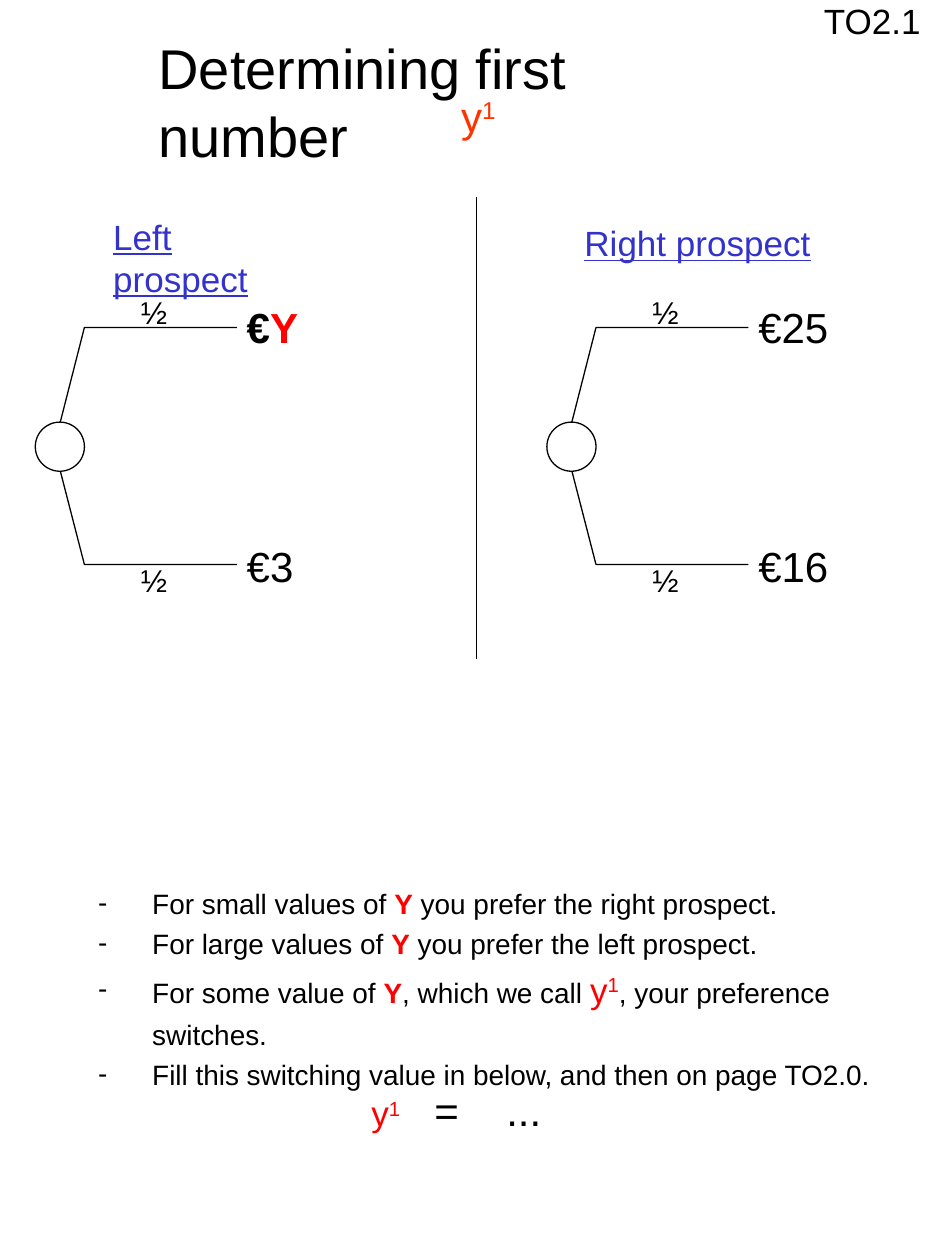
import pptx
import pptx.util
import pptx.dml.color
import pptx.enum.shapes
import pptx.oxml
import pptx.oxml.ns
from lxml import etree

Inches = pptx.util.Inches
Pt = pptx.util.Pt
RGB = pptx.dml.color.RGBColor
BLACK = RGB(0, 0, 0)
WHITE = RGB(255, 255, 255)
RED = RGB(255, 0, 0)
ORANGE = RGB(255, 0x33, 0)
BLUE = RGB(0x33, 0x33, 0xCC)
FONT = "Arial"


def add_run(para, text, size, color=BLACK, bold=False, line=False, lift=False):
    run = para.add_run()
    run.text = text
    font = run.font
    font.name, font.size, font.bold = FONT, Pt(size), bold
    font.underline = line
    font.color.rgb = color
    if lift:
        run._r.get_or_add_rPr().set("baseline", "30000")


def add_text(slide, box, runs, wrap=False, left=0.1, right=0.1):
    frame = slide.shapes.add_textbox(*map(Inches, box)).text_frame
    frame.word_wrap = wrap
    frame.margin_left, frame.margin_right = Inches(left), Inches(right)
    for run in runs:
        add_run(frame.paragraphs[0], **run)
    return frame


def add_tag(slide, box, text, right):
    add_text(slide, box, [dict(text=text, size=20, color=BLUE, line=True)],
             wrap=True, right=right)


def symbol(size, color):
    return [dict(text="y", size=size, color=color),
            dict(text="1", size=size, color=color, lift=True)]


def ink(shape):
    shape.shadow.inherit = False
    shape.line.color.rgb = BLACK
    shape.line.width = Pt(0.75)


def add_header(slide, left, top):
    add_text(slide, (left, top, 5.06, 0.63),
             [dict(text="Determining first number", size=32)],
             wrap=True, right=0.6)
    add_text(slide, (left + 1.85, top + 0.45, 1.04, 0.5),
             symbol(24, ORANGE), wrap=True, left=0.65, right=0)
    add_text(slide, (6.44, -0.05, 0.97, 0.43), [dict(text="TO2.1", size=20)])


def add_tree(slide, left, top, high, low):
    for start, end in ((0.94, 0), (0.95, 1.88)):
        pen = slide.shapes.build_freeform(Inches(left + 0.15), Inches(top + start))
        pen.add_line_segments([(Inches(left + 0.39), Inches(top + end)),
                               (Inches(left + 1.6), Inches(top + end))], close=False)
        branch = pen.convert_to_shape()
        branch.fill.background()
        ink(branch)
    node = slide.shapes.add_shape(
        pptx.enum.shapes.MSO_SHAPE.OVAL,
        Inches(left), Inches(top + 0.75), Inches(0.39), Inches(0.39))
    node.fill.solid()
    node.fill.fore_color.rgb = WHITE
    ink(node)
    for gap in (-0.32, 1.8):
        add_text(slide, (left + 0.74, top + gap, 0.41, 0.4),
                 [dict(text="½", size=18)])
    for gap, (runs, width) in ((-0.26, high), (1.64, low)):
        add_text(slide, (left + 1.58, top + gap, width, 0.5), runs)


def add_rule(slide, x, top, base):
    rule = slide.shapes.add_connector(
        pptx.enum.shapes.MSO_CONNECTOR.STRAIGHT,
        Inches(x), Inches(top), Inches(x), Inches(base))
    rule.line.color.rgb = BLACK
    rule.line.width = Pt(0.75)
    etree.SubElement(rule._element.spPr, pptx.oxml.ns.qn("a:effectLst"))


def add_notes(slide, box):
    key = dict(text="Y", size=16, color=RED, bold=True)

    def plain(text):
        return dict(text=text, size=16)

    rows = [
        [plain("For small values of "), key, plain(" you prefer the right prospect.")],
        [plain("For large values of "), key, plain(" you prefer the left prospect.")],
        [plain("For some value of "), key, plain(", which we call "),
         *symbol(20, RED), plain(", your preference switches.")],
        [plain("Fill this switching value in below, and then on page TO2.0.")],
    ]
    frame = add_text(slide, box, [], wrap=True)
    for i, row in enumerate(rows):
        para = frame.add_paragraph() if i else frame.paragraphs[0]
        para.line_spacing = 1.2
        props = para._p.get_or_add_pPr()
        props.set("marL", str(Inches(0.43)))
        props.set("indent", str(-Inches(0.43)))
        face = etree.SubElement(props, pptx.oxml.ns.qn("a:buFont"))
        face.set("typeface", FONT)
        mark = etree.SubElement(props, pptx.oxml.ns.qn("a:buChar"))
        mark.set("char", "-")
        for run in row:
            add_run(para, **run)


def add_answer(slide, box):
    runs = symbol(20, RED) + [dict(text="\t=\t...", size=24)]
    frame = add_text(slide, box, runs, wrap=True, right=0)
    props = frame.paragraphs[0]._p.get_or_add_pPr()
    tabs = etree.SubElement(props, pptx.oxml.ns.qn("a:tabLst"))
    for stop in (0.5, 1.07):
        tab = etree.SubElement(tabs, pptx.oxml.ns.qn("a:tab"))
        tab.set("pos", str(Inches(stop)))
        tab.set("algn", "l")


def main():
    deck = pptx.Presentation()
    deck.slide_width, deck.slide_height = Inches(7.5), Inches(10)
    slide = deck.slides.add_slide(deck.slide_layouts[6])
    add_header(slide, 1.16, 0.22)
    prize = [dict(text="€", size=24, bold=True),
             dict(text="Y", size=24, color=RED, bold=True)]
    add_tree(slide, 0.28, 2.6, (prize, 0.61), ([dict(text="€3", size=24)], 0.57))
    add_tree(slide, 4.34, 2.6, ([dict(text="€25", size=24)], 0.76),
             ([dict(text="€16", size=24)], 0.76))
    add_tag(slide, (0.8, 1.66, 1.8, 0.43), "Left prospect", 0.4)
    add_tag(slide, (4.54, 1.71, 1.99, 0.43), "Right prospect", 0)
    add_rule(slide, 3.78, 1.56, 5.23)
    add_notes(slide, (0.68, 6.93, 6.45, 1.78))
    add_answer(slide, (2.85, 8.56, 1.56, 0.5))
    deck.save("out.pptx")


if __name__ == "__main__":
    main()
